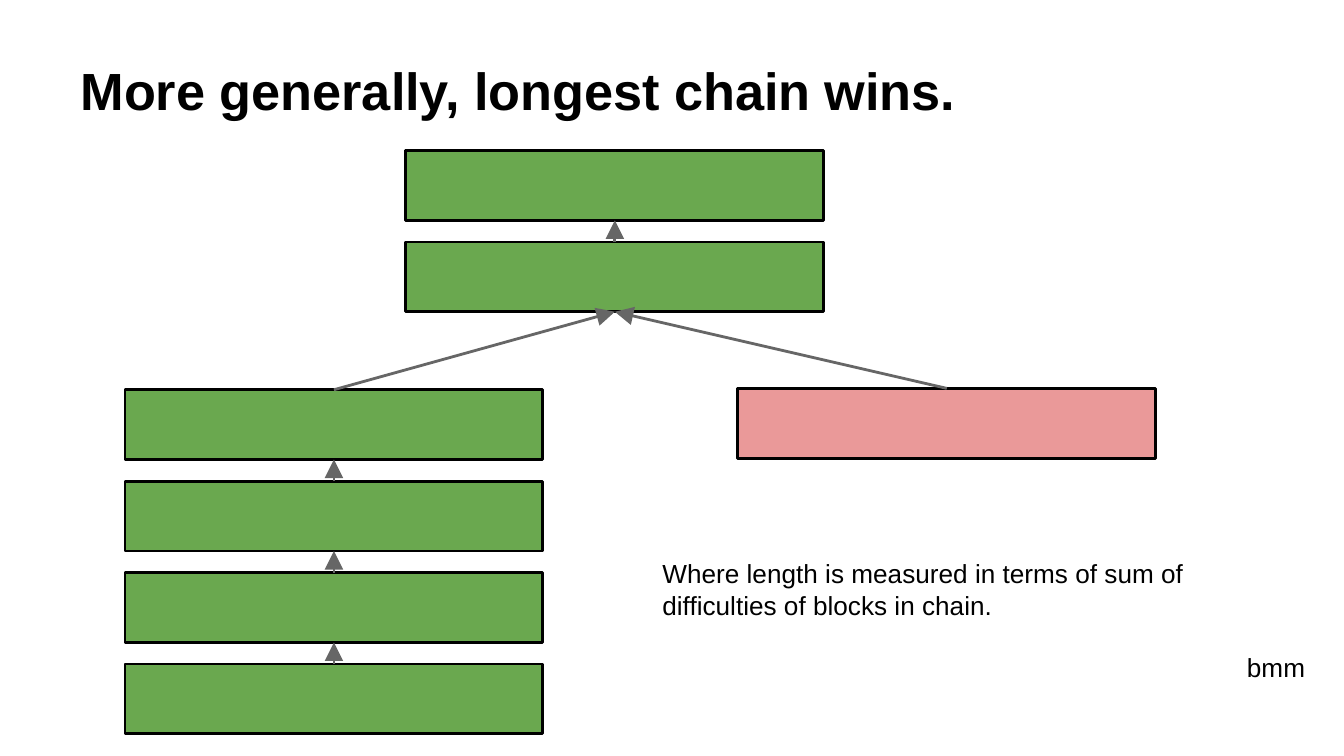
from pptx import Presentation, util as u
from pptx.dml.color import RGBColor
from pptx.enum import shapes, text
from pptx.oxml.ns import qn
from lxml import etree

SLIDE_W = 10
SLIDE_H = SLIDE_W * 9 / 16
BLOCK_W, BLOCK_H = 3.11, 0.52
ROW_PITCH = 0.68
TRUNK_LEFT, LONG_LEFT, SHORT_LEFT = 3.02, 0.93, 5.49
TRUNK_TOP, LONG_TOP, SHORT_TOP = 1.12, 2.9, 2.89
GREEN, PINK, BLACK, GREY = "6AA84F", "EA9999", "000000", "666666"


def color(hex_value):
    return RGBColor.from_string(hex_value)


def style_text(frame, words, size, bold=False):
    frame.text = words
    font = frame.paragraphs[0].font
    font.name, font.size, font.bold = "Arial", u.Pt(size), bold
    font.color.rgb = color(BLACK)


def place(item, left, top, width, height):
    item.left, item.top = u.Inches(left), u.Inches(top)
    item.width, item.height = u.Inches(width), u.Inches(height)


def add_title(slide, words):
    title = slide.shapes.title
    place(title, 0.5, 0.06, 9, 0.94)
    frame = title.text_frame
    frame.margin_left = frame.margin_right = u.Inches(0.1)
    frame.margin_top = frame.margin_bottom = u.Inches(0.1)
    frame.vertical_anchor = text.MSO_ANCHOR.BOTTOM
    frame.auto_size = text.MSO_AUTO_SIZE.NONE
    style_text(frame, words, 28, bold=True)
    frame.paragraphs[0].alignment = text.PP_ALIGN.LEFT


def add_block(slide, left, top, fill):
    block = slide.shapes.add_shape(
        shapes.MSO_SHAPE.RECTANGLE, u.Inches(left), u.Inches(top),
        u.Inches(BLOCK_W), u.Inches(BLOCK_H))
    block.shadow.inherit = False
    block.fill.solid()
    block.fill.fore_color.rgb = color(fill)
    block.line.color.rgb = color(BLACK)
    block.line.width = u.Pt(1.5)
    return block


def link_to_parent(slide, child, parent):
    """Draw an arrow from the top of child to the bottom of parent."""
    arrow = slide.shapes.add_connector(shapes.MSO_CONNECTOR.STRAIGHT, 0, 0, 0, 0)
    arrow.begin_connect(child, 0)
    arrow.end_connect(parent, 2)
    arrow.line.color.rgb = color(GREY)
    arrow.line.width = u.Pt(1.5)
    properties = arrow._element.spPr
    etree.SubElement(properties.find(qn("a:ln")), qn("a:tailEnd"),
                     type="triangle", w="lg", len="lg")
    etree.SubElement(properties, qn("a:effectLst"))


def add_chain(slide, left, top, count, fill, parent=None):
    """Stack blocks downwards, each pointing to the one above; return the last."""
    for row in range(count):
        block = add_block(slide, left, top + row * ROW_PITCH, fill)
        if parent is not None:
            link_to_parent(slide, block, parent)
        parent = block
    return parent


def add_note(slide, words, left, top, width, height, wrap=True):
    note = slide.shapes.add_textbox(0, 0, 0, 0)
    place(note, left, top, width, height)
    frame = note.text_frame
    frame.word_wrap = wrap
    frame.auto_size = text.MSO_AUTO_SIZE.SHAPE_TO_FIT_TEXT
    style_text(frame, words, 14)


def main():
    deck = Presentation()
    deck.slide_width, deck.slide_height = u.Inches(SLIDE_W), u.Inches(SLIDE_H)
    slide = deck.slides.add_slide(deck.slide_layouts[5])

    add_title(slide, "More generally, longest chain wins.")
    fork = add_chain(slide, TRUNK_LEFT, TRUNK_TOP, 2, GREEN)
    add_chain(slide, SHORT_LEFT, SHORT_TOP, 1, PINK, fork)
    add_chain(slide, LONG_LEFT, LONG_TOP, 4, GREEN, fork)
    add_note(slide, "Where length is measured in terms of sum of "
             "difficulties of blocks in chain.", 4.83, 4.1, 4.75, 0.57)
    add_note(slide, "bmm", 9.18, 4.8, 0.64, 0.34, wrap=False)

    deck.save("out.pptx")


if __name__ == "__main__":
    main()
